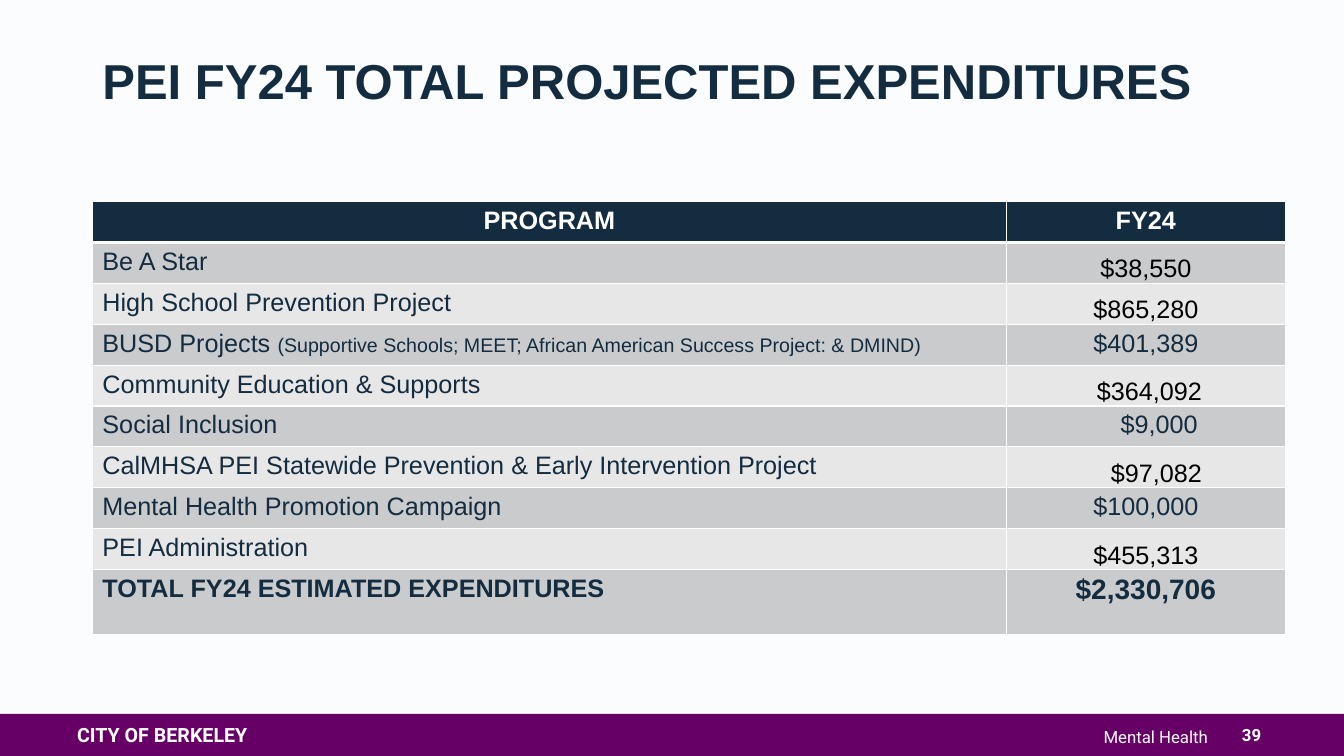
from lxml.etree import SubElement
from pptx import Presentation
from pptx.dml.color import RGBColor
from pptx.enum.shapes import MSO_SHAPE
from pptx.enum.text import MSO_ANCHOR, MSO_AUTO_SIZE, PP_ALIGN
from pptx.oxml.ns import qn
from pptx.util import Pt

SLIDE_WIDTH, SLIDE_HEIGHT = 960, 540
FOOTER_TOP, FOOTER_HEIGHT = 510, 30
ROW_HEIGHT, TOTAL_HEIGHT = 29.2, 46.5
HEADINGS = ("PROGRAM", "FY24")
# Program, detail, amount, amount colour role, indent of the amount
PROGRAMS = [
    ("Be A Star", "", "$38,550", "black", 0),
    ("High School Prevention Project", "", "$865,280", "black", 0),
    ("BUSD Projects ",
     "(Supportive Schools; MEET; African American Success Project: & DMIND)",
     "$401,389", "navy", 0),
    ("Community Education & Supports", "", "$364,092", "black", 5),
    ("Social Inclusion", "", "$9,000", "navy", 19),
    ("CalMHSA PEI Statewide Prevention & Early Intervention Project", "",
     "$97,082", "black", 15),
    ("Mental Health Promotion Campaign", "", "$100,000", "navy", 0),
    ("PEI Administration", "", "$455,313", "black", 0),
]
TOTAL = ("TOTAL FY24 ESTIMATED EXPENDITURES", "$2,330,706")


def color(hex_code):
    return RGBColor.from_string(hex_code)


class SlideBuilder:
    BODY_FONT, FOOTER_FONT = "Arial", "Roboto"
    COLORS = {"navy": "142C3F", "black": "000000", "white": "FFFFFF",
              "purple": "660066", "background": "FBFCFD",
              "dark band": "CACBCD", "light band": "E7E7E8"}

    def __init__(self, deck):
        self.slide = deck.slides.add_slide(deck.slide_layouts[5])
        self.paint(self.slide.background.fill, "background")

    def paint(self, fill, role):
        fill.solid()
        fill.fore_color.rgb = color(self.COLORS[role])

    def style(self, run, size, role, bold=False, font=BODY_FONT):
        run.font.name, run.font.size, run.font.bold = font, Pt(size), bold
        run.font.color.rgb = color(self.COLORS[role])

    def title(self, text, left, top, width, height):
        heading = self.slide.shapes.title
        heading.left, heading.top = Pt(left), Pt(top)
        heading.width, heading.height = Pt(width), Pt(height)
        frame = heading.text_frame
        frame.text = text
        frame.auto_size = MSO_AUTO_SIZE.NONE
        frame.vertical_anchor = MSO_ANCHOR.TOP
        line = frame.paragraphs[0]
        line.alignment, line.line_spacing = PP_ALIGN.LEFT, 0.9
        self.style(line.runs[0], 35, "navy", bold=True)

    def bar(self, left, top, width, height, role):
        band = self.slide.shapes.add_shape(
            MSO_SHAPE.RECTANGLE, Pt(left), Pt(top), Pt(width), Pt(height))
        band.shadow.inherit = False
        self.paint(band.fill, role)
        band.line.fill.background()

    def footer_text(self, text, left, width, size, align, bold=False, drop=0):
        label = self.slide.shapes.add_textbox(
            Pt(left), Pt(FOOTER_TOP + drop), Pt(width), Pt(FOOTER_HEIGHT))
        frame = label.text_frame
        frame.word_wrap = True
        frame.vertical_anchor = MSO_ANCHOR.MIDDLE
        frame.text = text
        line = frame.paragraphs[0]
        line.alignment = align
        self.style(line.runs[0], size, "white", bold, self.FOOTER_FONT)

    def table(self, left, top, widths, heights):
        table = self.slide.shapes.add_table(
            len(heights), len(widths), Pt(left), Pt(top),
            Pt(sum(widths)), Pt(sum(heights))).table
        for column, width in zip(table.columns, widths):
            column.width = Pt(width)
        for row, height in zip(table.rows, heights):
            row.height = Pt(height)
        return table

    def borders(self, cell, top=1, bottom=1):
        """Draw white cell edges; must come before the cell's fill."""
        properties = cell._tc.get_or_add_tcPr()
        edges = {"a:lnL": 1, "a:lnR": 1, "a:lnT": top, "a:lnB": bottom}
        for tag, width in edges.items():
            edge = SubElement(properties, qn(tag), w=str(Pt(width)))
            fill = SubElement(edge, qn("a:solidFill"))
            SubElement(fill, qn("a:srgbClr"), val=self.COLORS["white"])

    def cell(self, cell, text, band, role="navy", size=18, bold=False,
             align=PP_ALIGN.CENTER, detail="", indent=0, top=1, bottom=1):
        self.borders(cell, top, bottom)
        self.paint(cell.fill, band)
        cell.margin_left = Pt(7.2 + indent)
        line = cell.text_frame.paragraphs[0]
        line.text = text
        line.alignment = align
        self.style(line.runs[0], size, role, bold)
        if detail:
            note = line.add_run()
            note.text = detail
            self.style(note, 14, role)

    def expenditures(self, left, top, widths):
        heights = [ROW_HEIGHT] * (len(PROGRAMS) + 1) + [TOTAL_HEIGHT]
        table = self.table(left, top, widths, heights)
        for column, heading in enumerate(HEADINGS):
            self.cell(table.cell(0, column), heading, "navy", "white",
                      bold=True, bottom=3)
        for row, (program, detail, amount, role, indent) in enumerate(PROGRAMS, 1):
            band = "dark band" if row % 2 else "light band"
            edge = 3 if row == 1 else 1
            self.cell(table.cell(row, 0), program, band, align=PP_ALIGN.LEFT,
                      detail=detail, top=edge)
            amount_cell = table.cell(row, 1)
            self.cell(amount_cell, amount, band, role, indent=indent, top=edge)
            if role == "black":
                amount_cell.vertical_anchor = MSO_ANCHOR.BOTTOM
                amount_cell.margin_top, amount_cell.margin_bottom = Pt(0.7), Pt(0)
        last = len(heights) - 1
        self.cell(table.cell(last, 0), TOTAL[0], "dark band", bold=True,
                  align=PP_ALIGN.LEFT)
        self.cell(table.cell(last, 1), TOTAL[1], "dark band", size=20, bold=True)


def main():
    deck = Presentation()
    deck.slide_width, deck.slide_height = Pt(SLIDE_WIDTH), Pt(SLIDE_HEIGHT)
    page = SlideBuilder(deck)
    page.bar(0, FOOTER_TOP, SLIDE_WIDTH, FOOTER_HEIGHT, "purple")
    page.footer_text("CITY OF BERKELEY", 48, 180, 14, PP_ALIGN.LEFT, bold=True)
    page.footer_text("Mental Health", 420, 450, 12, PP_ALIGN.RIGHT, drop=1)
    page.footer_text("39", 870, 48, 12, PP_ALIGN.CENTER, bold=True)
    page.title("PEI FY24 TOTAL PROJECTED EXPENDITURES", 66, 37.5, 828, 88.5)
    page.expenditures(66, 144, (653, 199))
    deck.save("out.pptx")


if __name__ == "__main__":
    main()
